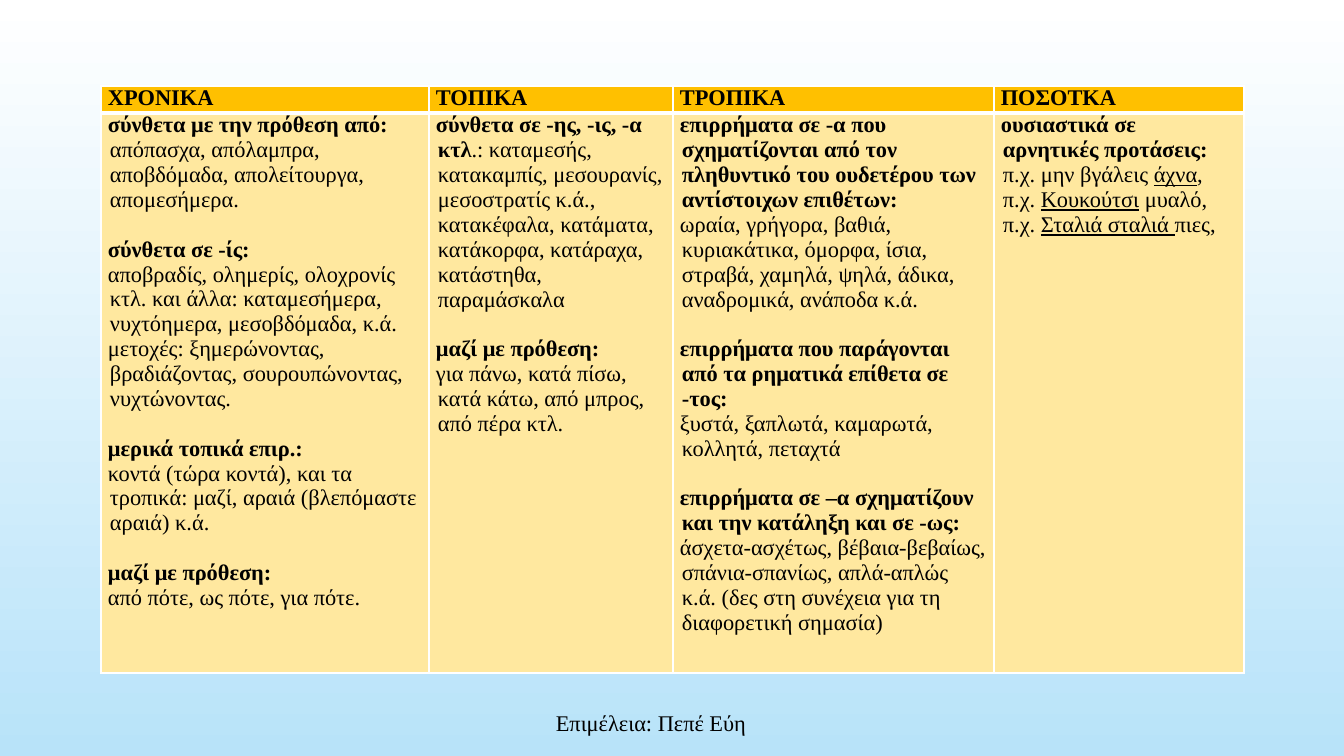
"""Build the slide with the table of Greek adverb groups."""
from lxml.etree import SubElement
from pptx import Presentation
from pptx.dml.color import RGBColor
from pptx.enum.text import MSO_ANCHOR, PP_ALIGN
from pptx.oxml.ns import qn
from pptx.util import Pt

PX = 12192000 / 1344
FONT, SIZE, GAP = "Times New Roman", 16, 17.7
COLORS = {"top": "FFFFFF", "bottom": "B8E3F9", "text": "000000",
          "head": "FFC000", "body": "FFE89F", "border": "FFFFFF"}
CREDIT = "Επιμέλεια: Πεπέ Εύη"
CREDIT_BOX = (283, 703, 736, 40)
TABLE_LEFT, TABLE_TOP = 101, 86
WIDTHS = (328, 244, 321, 250)
HEIGHTS = (25, 522)

# "b" is bold, "u" is underlined
COLUMNS = [
    ("ΧΡΟΝΙΚΑ", [
        [("σύνθετα με την πρόθεση από: ", "b"),
         ("απόπασχα, απόλαμπρα, αποβδόμαδα, απολείτουργα, απομεσήμερα.", "")],
        [("σύνθετα σε -ίς:", "b")],
        [("αποβραδίς, ολημερίς, ολοχρονίς κτλ. και άλλα: καταμεσήμερα, "
          "νυχτόημερα, μεσοβδόμαδα, κ.ά.", "")],
        [("μετοχές: ξημερώνοντας, βραδιάζοντας, σουρουπώνοντας, νυχτώνοντας.", "")],
        [("μερικά τοπικά επιρ.:", "b")],
        [("κοντά (τώρα κοντά), και τα τροπικά: μαζί, αραιά (βλεπόμαστε αραιά) κ.ά.", "")],
        [("μαζί με πρόθεση:", "b")],
        [("από πότε, ως πότε, για πότε.", "")],
    ]),
    ("ΤΟΠΙΚΑ", [
        [("σύνθετα σε -ης, -ις, -α κτλ", "b"),
         (".: καταμεσής, κατακαμπίς, μεσουρανίς, μεσοστρατίς κ.ά., κατακέφαλα, "
          "κατάματα, κατάκορφα, κατάραχα, κατάστηθα, παραμάσκαλα", "")],
        [("μαζί με πρόθεση:", "b")],
        [("για πάνω, κατά πίσω, κατά κάτω, από μπρος, από πέρα κτλ.", "")],
    ]),
    ("ΤΡΟΠΙΚΑ", [
        [("επιρρήματα σε -α που σχηματίζονται από τον πληθυντικό του ουδετέρου "
          "των αντίστοιχων επιθέτων:", "b")],
        [("ωραία, γρήγορα, βαθιά, κυριακάτικα, όμορφα, ίσια, στραβά, χαμηλά, "
          "ψηλά, άδικα, αναδρομικά, ανάποδα κ.ά.", "")],
        [("επιρρήματα που παράγονται από τα ρηματικά επίθετα σε -τος:", "b")],
        [("ξυστά, ξαπλωτά, καμαρωτά, κολλητά, πεταχτά", "")],
        [("επιρρήματα σε –α σχηματίζουν και την κατάληξη και σε -ως:", "b")],
        [("άσχετα-ασχέτως, βέβαια-βεβαίως, σπάνια-σπανίως, απλά-απλώς κ.ά. "
          "(δες στη συνέχεια για τη διαφορετική σημασία)", "")],
    ]),
    ("ΠΟΣΟΤΚΑ", [
        [("ουσιαστικά σε αρνητικές προτάσεις: ", "b"), ("π.χ. μην βγάλεις ", ""),
         ("άχνα", "u"), (", π.χ. ", ""), ("Κουκούτσι", "u"),
         (" μυαλό, π.χ. ", ""), ("Σταλιά σταλιά ", "u"), ("πιες,", "")],
    ]),
]


def px(n):
    return round(n * PX)


def rgb(name):
    return RGBColor.from_string(COLORS[name])


def style_run(r, style=""):
    r.font.name, r.font.size = FONT, Pt(SIZE)
    r.font.color.rgb = rgb("text")
    r.font.bold = style == "b"
    r.font.underline = style == "u"


def set_borders(cell, widths):
    tcPr = cell._tc.get_or_add_tcPr()
    for i, (side, width) in enumerate(zip("LRTB", widths)):
        ln = SubElement(tcPr, qn(f"a:ln{side}"), w=str(Pt(width)))
        fill = SubElement(ln, qn("a:solidFill"))
        SubElement(fill, qn("a:srgbClr"), val=COLORS["border"])
        tcPr.insert(i, ln)


def fill_cell(cell, paragraphs, color, borders):
    cell.margin_left = cell.margin_right = px(7)
    cell.margin_top = cell.margin_bottom = 0
    cell.fill.solid()
    cell.fill.fore_color.rgb = rgb(color)
    set_borders(cell, borders)
    tf = cell.text_frame
    for i, runs in enumerate(paragraphs):
        p = tf.add_paragraph() if i else tf.paragraphs[0]
        pPr = p._p.get_or_add_pPr()
        pPr.set("marL", str(px(2)))
        pPr.set("indent", str(px(-5)))
        if i and runs[0][1] == "b":
            p.space_before = Pt(GAP)
        for text, style in runs:
            r = p.add_run()
            r.text = text
            style_run(r, style)


def add_adverb_table(s):
    tbl = s.shapes.add_table(2, len(COLUMNS), px(TABLE_LEFT), px(TABLE_TOP),
                             px(sum(WIDTHS)), px(sum(HEIGHTS))).table
    tbl.horz_banding = False
    for row, height in zip(tbl.rows, HEIGHTS):
        row.height = px(height)
    for c, (heading, paragraphs) in enumerate(COLUMNS):
        tbl.columns[c].width = px(WIDTHS[c])
        fill_cell(tbl.cell(0, c), [[(heading, "b")]], "head", (1, 1, 1, 3))
        fill_cell(tbl.cell(1, c), paragraphs, "body", (1, 1, 3, 1))


def add_credit(s):
    tf = s.shapes.add_textbox(*map(px, CREDIT_BOX)).text_frame
    tf.word_wrap = True
    tf.vertical_anchor = MSO_ANCHOR.MIDDLE
    p = tf.paragraphs[0]
    p.text = CREDIT
    p.alignment = PP_ALIGN.CENTER
    style_run(p.runs[0])


def main():
    prs = Presentation()
    prs.slide_width, prs.slide_height = px(1344), px(756)
    s = prs.slides.add_slide(prs.slide_layouts[6])
    fill = s.background.fill
    fill.gradient()
    fill.gradient_angle = 270
    for stop, position, name in zip(fill.gradient_stops, (0, 1), ("top", "bottom")):
        stop.position = position
        stop.color.rgb = rgb(name)
    add_credit(s)
    add_adverb_table(s)
    prs.save("out.pptx")


if __name__ == "__main__":
    main()
